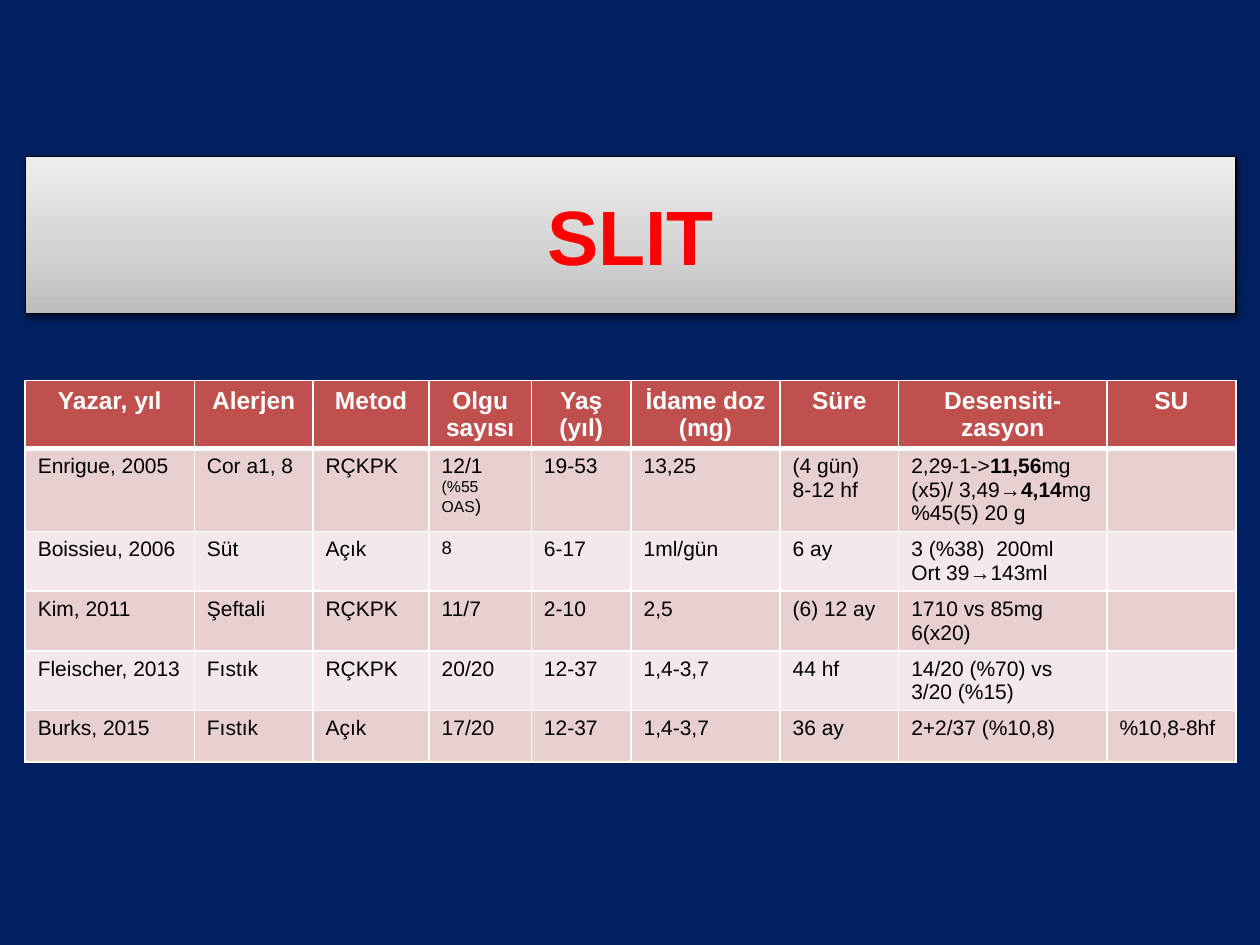
from dataclasses import dataclass

from lxml.etree import SubElement
from pptx import Presentation
from pptx.dml.color import RGBColor
from pptx.enum.text import MSO_ANCHOR, PP_ALIGN
from pptx.oxml.ns import qn
from pptx.util import Inches, Pt

CENTER, LEFT = PP_ALIGN.CENTER, PP_ALIGN.LEFT
MIDDLE = MSO_ANCHOR.MIDDLE
TITLE_ONLY = 5


@dataclass(frozen=True)
class Theme:
    font: str = "Arial"
    background: str = "002060"
    title: str = "FF0000"
    title_stops: tuple = ((0, "BDBDBD"), (35, "D1D1D1"), (100, "EEEEEE"))
    outline: str = "000000"
    header: str = "C0504D"
    header_text: str = "FFFFFF"
    text: str = "000000"
    bands: tuple = ("E8D0D0", "F4E9E9")
    border: str = "FFFFFF"
    title_size: float = 44
    header_size: float = 14
    body_size: float = 12
    note_size: float = 10.5
    small_size: float = 9


@dataclass(frozen=True)
class Span:
    text: str
    size: float = Theme.body_size
    bold: bool = False


THEME = Theme()
COLUMN_WIDTHS = (1.34, 0.94, 0.92, 0.81, 0.79, 1.18, 0.94, 1.65, 1.02)
ROW_HEIGHT = 0.41
HEADERS = ("Yazar, yıl", "Alerjen", "Metod", "Olgu sayısı", "Yaş\n(yıl)",
           "İdame doz\n(mg)", "Süre", "Desensiti-zasyon", "SU")

# A cell is plain text, or a list of paragraphs that are lists of spans.
CASES_ENRIGUE = [
    [Span("12/1")],
    [Span("(%55 OAS", THEME.small_size), Span(")", THEME.note_size)],
]
RESULT_ENRIGUE = [
    [Span("2,29-1->"), Span("11,56", bold=True), Span("mg (x5)/ 3,49→"),
     Span("4,14", bold=True), Span("mg")],
    [Span("%45(5) 20 g")],
]
STUDIES = (
    ("Enrigue, 2005", "Cor a1, 8", "RÇKPK", CASES_ENRIGUE, "19-53", "13,25",
     "(4 gün)\n8-12 hf", RESULT_ENRIGUE, ""),
    ("Boissieu, 2006", "Süt", "Açık", [[Span("8", THEME.note_size)]], "6-17",
     "1ml/gün", "6 ay", "3 (%38)  200ml\nOrt 39→143ml", ""),
    ("Kim, 2011", "Şeftali", "RÇKPK", "11/7", "2-10", "2,5", "(6) 12 ay",
     "1710 vs 85mg 6(x20)", ""),
    ("Fleischer, 2013", "Fıstık", "RÇKPK", "20/20", "12-37", "1,4-3,7",
     "44 hf", "14/20 (%70) vs 3/20 (%15)", ""),
    ("Burks, 2015", "Fıstık", "Açık", "17/20", "12-37", "1,4-3,7", "36 ay",
     "2+2/37 (%10,8)", "%10,8-8hf"),
)


def rgb(color):
    return RGBColor.from_string(color)


def add_color(parent, color):
    return SubElement(parent, qn("a:srgbClr"), val=color)


def write_text(frame, paragraphs, color, align):
    for index, spans in enumerate(paragraphs):
        para = frame.add_paragraph() if index else frame.paragraphs[0]
        para.alignment = align
        for span in spans:
            run = para.add_run()
            run.text = span.text
            run.font.name = THEME.font
            run.font.size = Pt(span.size)
            run.font.bold = span.bold
            run.font.color.rgb = rgb(color)


def add_gradient(properties, stops, angle):
    gradient = SubElement(properties, qn("a:gradFill"), rotWithShape="1")
    stop_list = SubElement(gradient, qn("a:gsLst"))
    for position, color in stops:
        stop = SubElement(stop_list, qn("a:gs"), pos=str(position * 1000))
        add_color(stop, color)
    SubElement(gradient, qn("a:lin"), ang=str(angle * 60000), scaled="0")


def add_shadow(properties):
    effects = SubElement(properties, qn("a:effectLst"))
    shadow = SubElement(effects, qn("a:outerShdw"), blurRad=str(Pt(3.1)),
                        dist=str(Pt(1.6)), dir=str(90 * 60000), rotWithShape="0")
    SubElement(add_color(shadow, THEME.outline), qn("a:alpha"), val="38000")


def build_title(page, left, top, width, height):
    box = page.shapes.title
    box.left, box.top, box.width, box.height = left, top, width, height
    properties = box._element.spPr
    add_gradient(properties, THEME.title_stops, 270)
    box.line.color.rgb = rgb(THEME.outline)
    box.line.width = Pt(0.75)
    add_shadow(properties)
    frame = box.text_frame
    frame.word_wrap = True
    frame.vertical_anchor = MIDDLE
    write_text(frame, [[Span("SLIT", THEME.title_size, True)]], THEME.title, CENTER)


def set_borders(cell, top=1, bottom=1):
    """Draw the four sides; must come before the fill in the cell's XML."""
    properties = cell._tc.get_or_add_tcPr()
    for side, width in (("L", 1), ("R", 1), ("T", top), ("B", bottom)):
        line = SubElement(properties, qn(f"a:ln{side}"), w=str(Pt(width)))
        add_color(SubElement(line, qn("a:solidFill")), THEME.border)


def fill_cell(cell, content, row):
    is_header = row == 0
    set_borders(cell, top=3 if row == 1 else 1, bottom=3 if is_header else 1)
    cell.fill.solid()
    cell.fill.fore_color.rgb = rgb(
        THEME.header if is_header else THEME.bands[(row - 1) % 2])
    if not content:
        return
    if isinstance(content, str):
        size = THEME.header_size if is_header else THEME.body_size
        content = [[Span(line, size, is_header)] for line in content.split("\n")]
    color, align = (THEME.header_text, CENTER) if is_header else (THEME.text, LEFT)
    write_text(cell.text_frame, content, color, align)


def build_study_table(page, left, top, width):
    rows = (HEADERS, *STUDIES)
    height = Inches(ROW_HEIGHT * len(rows))
    table = page.shapes.add_table(
        len(rows), len(HEADERS), left, top, width, height).table
    for column, share in zip(table.columns, COLUMN_WIDTHS):
        column.width = int(width * share / sum(COLUMN_WIDTHS))
    for row, contents in enumerate(rows):
        table.rows[row].height = Inches(ROW_HEIGHT)
        for column, content in enumerate(contents):
            fill_cell(table.cell(row, column), content, row)


def main():
    deck = Presentation()
    deck.slide_width, deck.slide_height = Inches(10), Inches(7.5)
    page = deck.slides.add_slide(deck.slide_layouts[TITLE_ONLY])
    page.background.fill.solid()
    page.background.fill.fore_color.rgb = rgb(THEME.background)
    left, width = Inches(0.2), Inches(9.61)
    build_title(page, left, Inches(1.24), width, Inches(1.25))
    build_study_table(page, left, Inches(3.02), width)
    deck.save("out.pptx")


if __name__ == "__main__":
    main()
